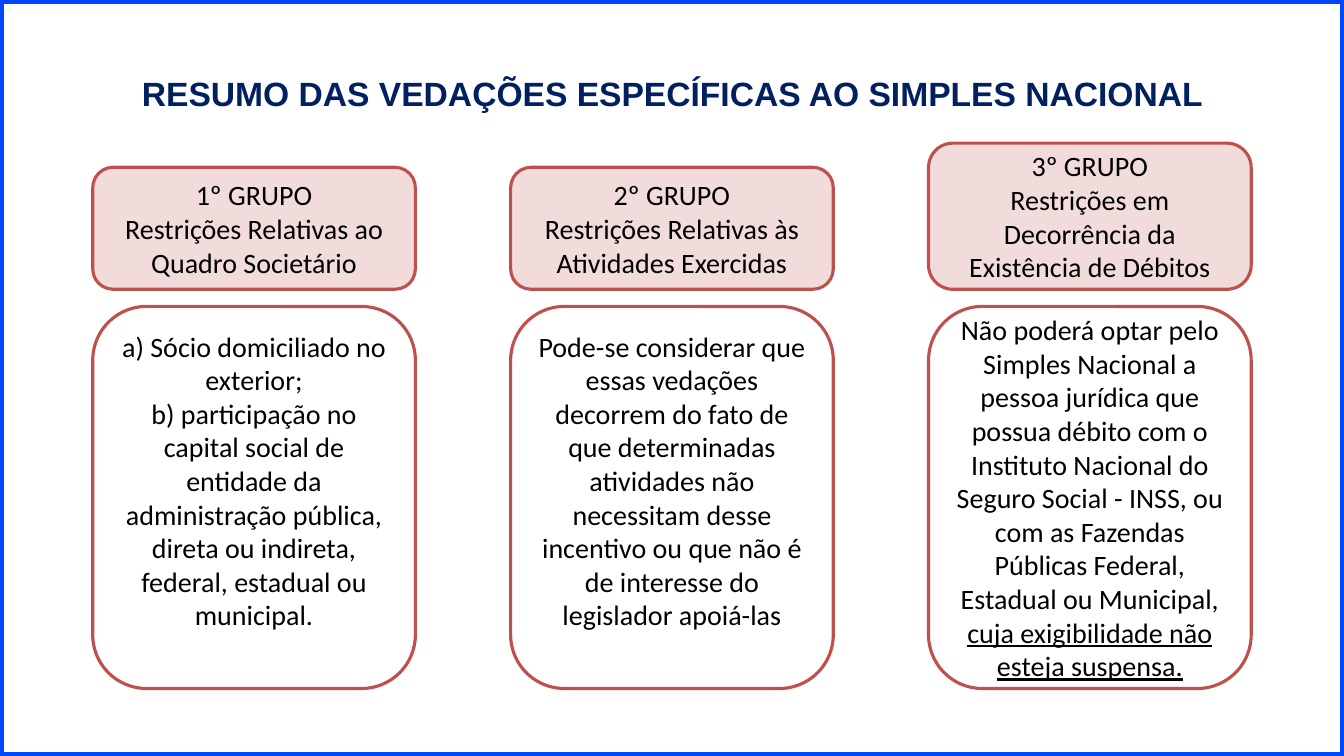
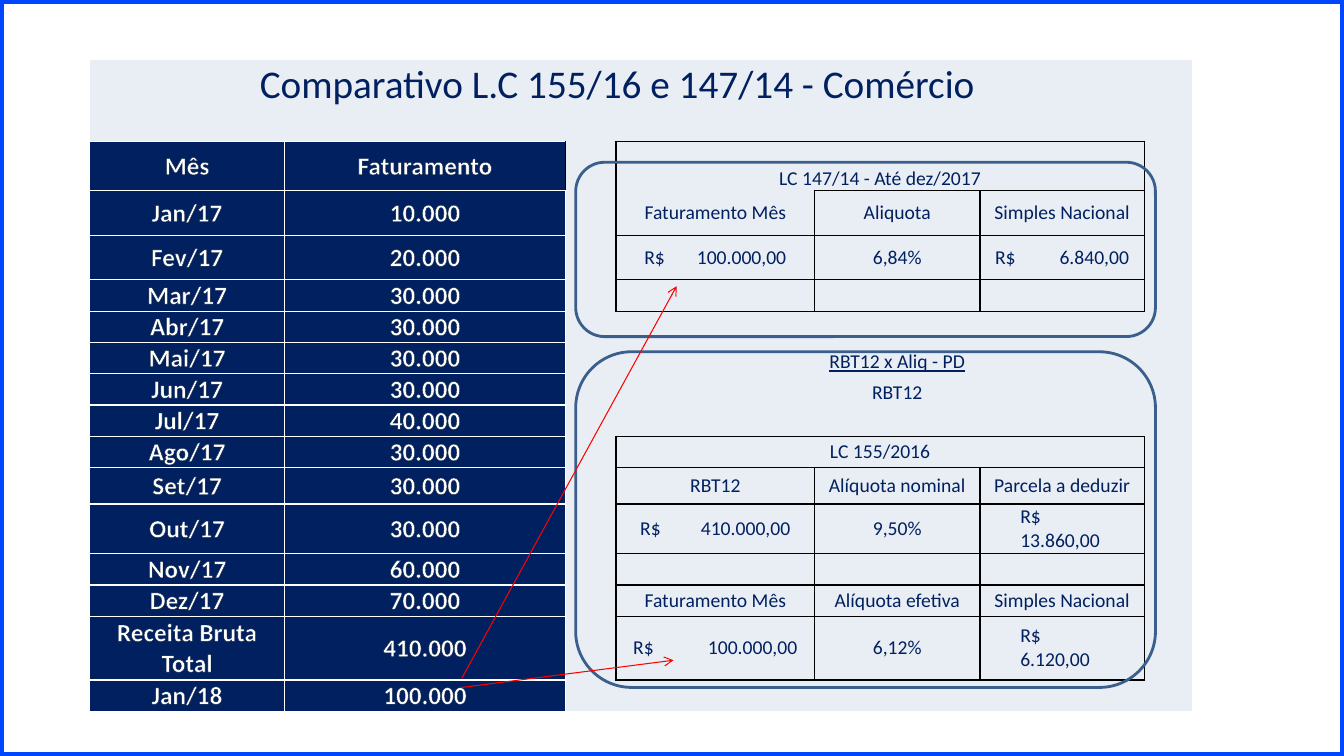
from dataclasses import dataclass

from lxml import etree
from pptx import Presentation
from pptx.dml.color import RGBColor
from pptx.enum.shapes import MSO_CONNECTOR, MSO_SHAPE
from pptx.enum.text import MSO_ANCHOR as Anchor, PP_ALIGN as Align
from pptx.oxml import parse_xml
from pptx.oxml.ns import nsdecls, qn
from pptx.table import _Cell as Cell
from pptx.util import Inches, Pt


@dataclass(frozen=True)
class Theme:
    frame: str = "0046FF"
    navy: str = "002060"
    text_outline: str = "0F243E"
    black: str = "000000"
    white: str = "FFFFFF"
    pale: str = "E9EDF4"
    pink: str = "F2DCDB"
    brick: str = "C0504D"
    steel: str = "3A5F8C"
    red: str = "FF0000"
    heading_font: str = "Arial"
    body_font: str = "Calibri"
    title_size: int = 24
    table_title_size: int = 28
    body_size: int = 20
    month_size: int = 18
    detail_size: int = 14


theme = Theme()
rgb = RGBColor.from_string


def write(holder, paragraphs, size, color=theme.black, font=theme.body_font, bold=False,
          underline=False, align=Align.CENTER, anchor=Anchor.MIDDLE, outline=None, tab=None):
    """Fill a shape or table cell; a paragraph given as a pair has its second part underlined."""
    frame = holder.text_frame
    if isinstance(holder, Cell):
        holder.vertical_anchor = anchor
    else:
        frame.vertical_anchor = anchor
        frame.word_wrap = True
    for index, content in enumerate(paragraphs):
        paragraph = frame.paragraphs[0] if index == 0 else frame.add_paragraph()
        paragraph.alignment = align
        if tab:
            properties = paragraph._p.get_or_add_pPr()
            stops = etree.SubElement(properties, qn("a:tabLst"))
            etree.SubElement(stops, qn("a:tab"), pos=str(Inches(tab)), algn="r")
        parts = (content,) if isinstance(content, str) else content
        for part_index, text in enumerate(parts):
            run = paragraph.add_run()
            run.text = text
            run.font.size, run.font.name, run.font.bold = Pt(size), font, bold
            run.font.underline = underline or part_index == 1
            run.font.color.rgb = rgb(color)
            if outline:
                run._r.get_or_add_rPr().insert(0, parse_xml(
                    f'<a:ln {nsdecls("a")} w="{Pt(0.75)}"><a:solidFill>'
                    f'<a:srgbClr val="{outline}"/></a:solidFill></a:ln>'))


def add_box(slide, preset, left, top, width, height, line, weight, fill=None):
    shape = slide.shapes.add_shape(
        preset, Inches(left), Inches(top), Inches(width), Inches(height))
    shape.shadow.inherit = False
    shape.line.color.rgb = rgb(line)
    shape.line.width = Pt(weight)
    if fill:
        shape.fill.solid()
        shape.fill.fore_color.rgb = rgb(fill)
    else:
        shape.fill.background()
    return shape


presentation = Presentation()
presentation.slide_width, presentation.slide_height = Inches(13.33), Inches(7.5)
title_only, blank = presentation.slide_layouts[5], presentation.slide_layouts[6]

# Slide 1: three groups of restrictions
slide = presentation.slides.add_slide(title_only)

# The frame belongs to the master, so both slides show it
frame = add_box(slide, MSO_SHAPE.RECTANGLE, 0, 0, 13.33, 7.5, theme.frame, 6)
presentation.slide_master.shapes._spTree.insert(2, frame._element)

title = slide.shapes.title
title.left, title.top, title.width, title.height = map(Inches, (0.67, 0.3, 12, 1.25))
write(title, ["RESUMO DAS VEDAÇÕES ESPECÍFICAS AO SIMPLES NACIONAL"],
      size=theme.title_size, color=theme.navy, font=theme.heading_font, bold=True)

GROUP_LEFT, GROUP_STEP, GROUP_WIDTH = 0.92, 4.145, 3.2
HEADER_BOTTOM, BODY_TOP, BODY_HEIGHT = 2.87, 3.04, 3.79
# header height, header, body, room kept free below the body text
groups = [
    (1.21, ["1º GRUPO", "Restrições Relativas ao Quadro Societário"],
     ["a) Sócio domiciliado no exterior;",
      "b) participação no capital social de entidade da administração pública, "
      "direta ou indireta, federal, estadual ou municipal."], 0.39),
    (1.21, ["2º GRUPO", "Restrições Relativas às Atividades Exercidas"],
     ["Pode-se considerar que essas vedações decorrem do fato de que determinadas "
      "atividades não necessitam desse incentivo ou que não é de interesse do "
      "legislador apoiá-las"], 0.39),
    (1.45, ["3º GRUPO", "Restrições em Decorrência da Existência de Débitos"],
     [("Não poderá optar pelo Simples Nacional a pessoa jurídica que possua débito com o "
       "Instituto Nacional do Seguro Social - INSS, ou com as Fazendas Públicas Federal, "
       "Estadual ou Municipal, ", "cuja exigibilidade não esteja suspensa.")], 0.05),
]
for column, (header_height, header, body, room_below) in enumerate(groups):
    left = GROUP_LEFT + column * GROUP_STEP
    header_box = add_box(slide, MSO_SHAPE.ROUNDED_RECTANGLE, left, HEADER_BOTTOM - header_height,
                         GROUP_WIDTH, header_height, theme.brick, 2.25, theme.pink)
    write(header_box, header, size=theme.body_size)
    body_box = add_box(slide, MSO_SHAPE.ROUNDED_RECTANGLE, left, BODY_TOP,
                       GROUP_WIDTH, BODY_HEIGHT, theme.brick, 2.25)
    body_box.text_frame.margin_bottom = Inches(room_below)
    write(body_box, body, size=theme.body_size)

# Slide 2: comparison table
slide = presentation.slides.add_slide(blank)
TABLE_HEIGHT = 6.46
widths = [1.93, 2.79, 0.5, 1.97, 1.64, 1.63, 0.47]
row_shares = [0.49, 0.31, 0.49, 0.44, 0.44, *[0.31] * 6, 0.36, 0.49, 0.31, 0.31, 0.63, 0.31]
graphic = slide.shapes.add_table(len(row_shares), len(widths), Inches(0.89), Inches(0.6),
                                 Inches(sum(widths)), Inches(TABLE_HEIGHT))
table = graphic.table
table.first_row = table.horz_banding = False
NO_STYLE_NO_GRID = "{2D5ABB26-0587-4C30-8999-92F81FD0307C}"
table._tbl.tblPr.find(qn("a:tableStyleId")).text = NO_STYLE_NO_GRID
for column, width in zip(table.columns, widths):
    column.width = Inches(width)
for row, share in zip(table.rows, row_shares):
    row.height = Inches(TABLE_HEIGHT * share / sum(row_shares))

MONTHS_TOP = 2
UPPER_ROWS, LOWER_ROWS = range(3, 6), range(10, 16)
DETAIL_COLUMNS = range(3, 6)
for row in range(len(row_shares)):
    for column in range(len(widths)):
        cell = table.cell(row, column)
        cell.margin_left = cell.margin_right = cell.margin_top = cell.margin_bottom = 0
        in_months = column < 2 and row >= MONTHS_TOP
        cell.fill.solid()
        cell.fill.fore_color.rgb = rgb(theme.navy if in_months else theme.pale)

        # A lower-case side is explicitly left without a line
        sides = ""
        if in_months:
            sides = "LRTB"
        elif column in DETAIL_COLUMNS:
            if row == MONTHS_TOP:
                sides = "LTb" if column == 3 else "T"
            elif row == LOWER_ROWS[0]:
                sides = {3: "LTB", 4: "TB", 5: "RTB"}[column]
            elif row in UPPER_ROWS or row in LOWER_ROWS:
                sides = "LRtB" if (row, column) == (3, 3) else "LRTB"
        properties = cell._tc.get_or_add_tcPr()
        for position, side in enumerate(sides):
            black = not in_months or (row, column, side) == (MONTHS_TOP, 1, "R")
            color = theme.black if black else theme.white
            paint = (f'<a:solidFill><a:srgbClr val="{color}"/></a:solidFill>'
                     if side.isupper() else "<a:noFill/>")
            tag = f"a:ln{side.upper()}"
            properties.insert(position, parse_xml(
                f'<{tag} {nsdecls("a")} w="{Pt(1)}">{paint}</{tag}>'))

for first, last in [((0, 0), (0, 5)), ((1, 2), (1, 3)), ((1, 6), (2, 6)),
                    ((2, 3), (2, 5)), ((10, 3), (10, 5))]:
    table.cell(*first).merge(table.cell(*last))

write(table.cell(0, 0), ["Comparativo L.C 155/16 e 147/14 - Comércio"],
      size=theme.table_title_size, color=theme.navy)

revenue = [
    ("Mês", "Faturamento"), ("Jan/17", "10.000"), ("Fev/17", "20.000"), ("Mar/17", "30.000"),
    ("Abr/17", "30.000"), ("Mai/17", "30.000"), ("Jun/17", "30.000"), ("Jul/17", "40.000"),
    ("Ago/17", "30.000"), ("Set/17", "30.000"), ("Out/17", "30.000"), ("Nov/17", "60.000"),
    ("Dez/17", "70.000"), ("Receita Bruta Total", "410.000"), ("Jan/18", "100.000"),
]
for row, entry in enumerate(revenue, start=MONTHS_TOP):
    for column, text in enumerate(entry):
        write(table.cell(row, column), [text], size=theme.month_size,
              color=theme.white, bold=True, outline=theme.text_outline)

details = {
    (2, 3): "LC 147/14 - Até dez/2017",
    (3, 3): "Faturamento Mês", (3, 4): "Aliquota", (3, 5): "Simples Nacional",
    (4, 4): "6,84%",
    (7, 4): "RBT12 x Aliq - PD", (8, 4): "RBT12",
    (10, 3): "LC 155/2016",
    (11, 3): "RBT12", (11, 4): "Alíquota nominal", (11, 5): "Parcela a deduzir",
    (12, 4): "9,50%",
    (14, 3): "Faturamento Mês", (14, 4): "Alíquota efetiva", (14, 5): "Simples Nacional",
    (15, 4): "6,12%",
}
for (row, column), text in details.items():
    write(table.cell(row, column), [text], size=theme.detail_size, color=theme.navy,
          underline=(row == 7), anchor=Anchor.BOTTOM if row in (2, 7, 8) else Anchor.MIDDLE)

# row, column, side inset, amount, whether the amount stands below its currency sign
amounts = [
    (4, 3, 0.28, "100.000,00", False), (4, 5, 0.15, "6.840,00", False),
    (12, 3, 0.24, "410.000,00", False), (12, 5, 0.4, "13.860,00", True),
    (15, 3, 0.17, "100.000,00", False), (15, 5, 0.4, "6.120,00", True),
]
for row, column, inset, amount, stacked in amounts:
    cell = table.cell(row, column)
    cell.margin_left = Inches(inset)
    write(cell, ["R$", amount] if stacked else [f"R$\t{amount}"],
          size=theme.detail_size, color=theme.navy, align=Align.LEFT,
          tab=None if stacked else widths[column] - 2 * inset)

for top, height in [(1.61, 1.73), (3.49, 3.33)]:
    add_box(slide, MSO_SHAPE.ROUNDED_RECTANGLE, 5.71, top, 5.75, height, theme.steel, 2)

for start, end in [((4.58, 6.82), (6.68, 6.55)), ((4.58, 6.73), (6.71, 2.84))]:
    arrow = slide.shapes.add_connector(MSO_CONNECTOR.STRAIGHT, *map(Inches, start + end))
    arrow.line.color.rgb = rgb(theme.red)
    arrow.line.width = Pt(0.75)
    etree.SubElement(arrow.line._get_or_add_ln(), qn("a:tailEnd"), type="arrow")
    etree.SubElement(arrow._element.spPr, qn("a:effectLst"))

presentation.save("out.pptx")
